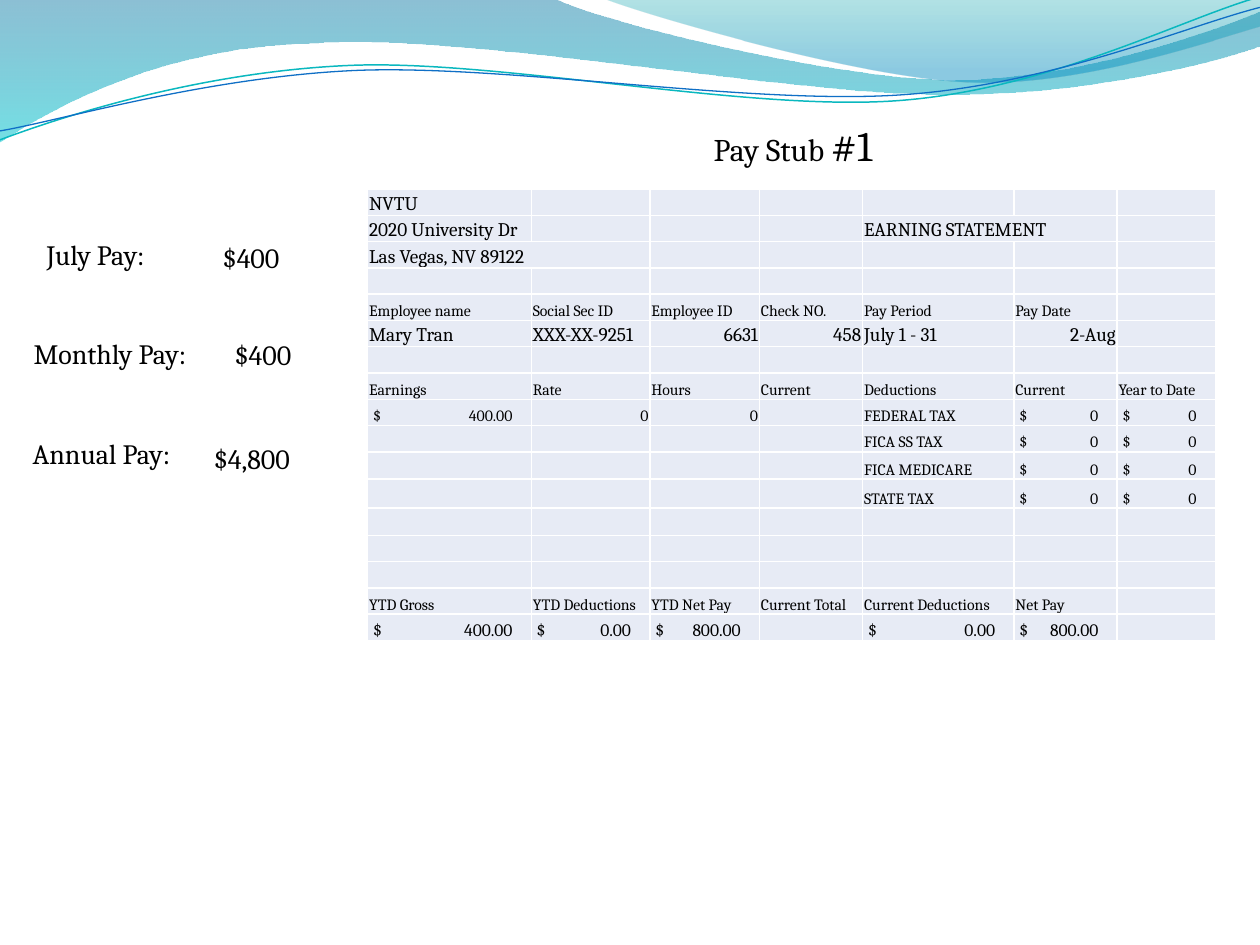
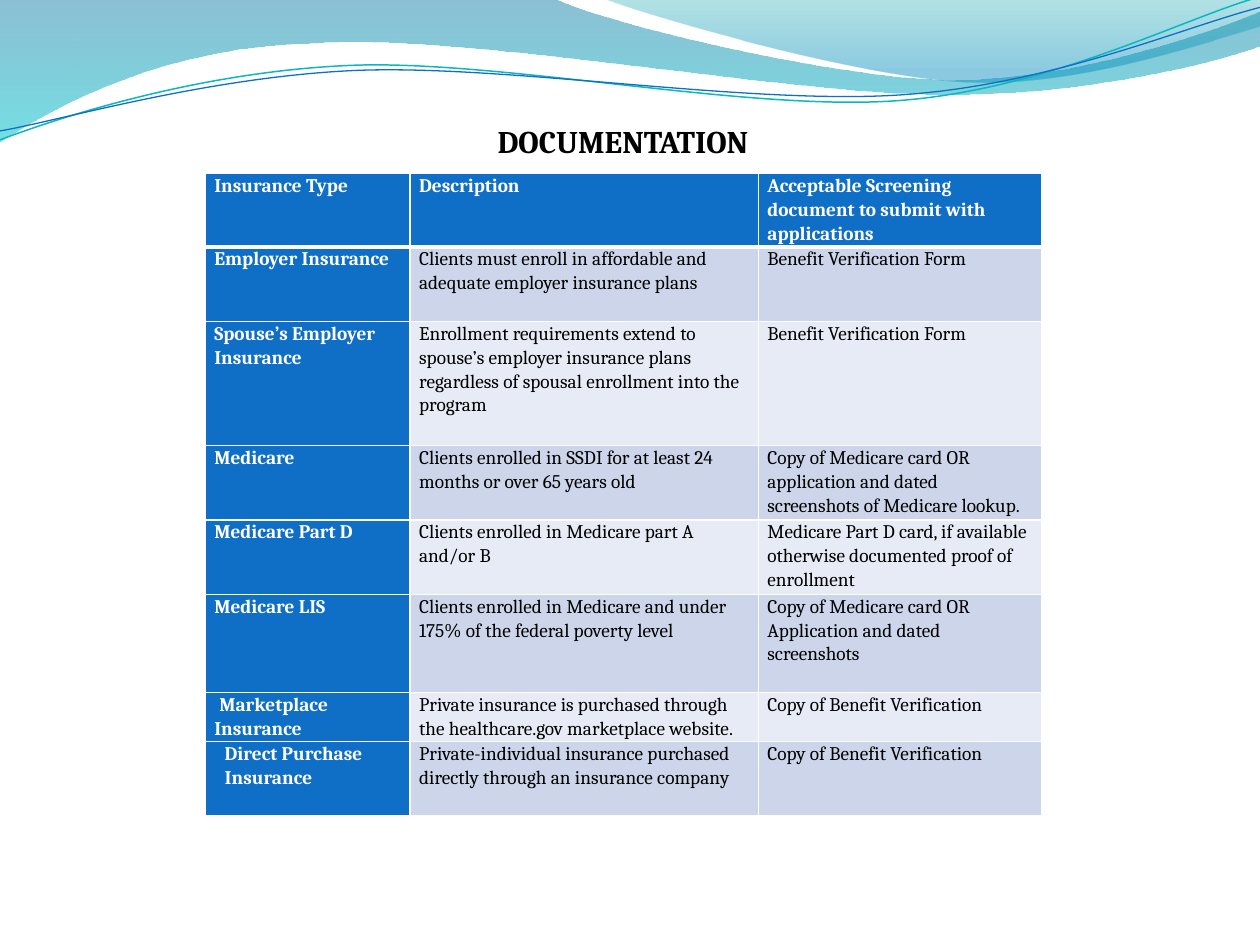
from dataclasses import dataclass

from lxml import etree
from pptx import Presentation
from pptx.dml.color import RGBColor
from pptx.enum.text import MSO_ANCHOR, MSO_AUTO_SIZE, PP_ALIGN
from pptx.oxml.ns import qn
from pptx.util import Cm, Pt

TOP, BOTTOM = MSO_ANCHOR.TOP, MSO_ANCHOR.BOTTOM
LEFT, CENTER, RIGHT = PP_ALIGN.LEFT, PP_ALIGN.CENTER, PP_ALIGN.RIGHT
NO_AUTOFIT = MSO_AUTO_SIZE.NONE

FONT = "Cambria"
BLACK, WHITE = "000000", "FFFFFF"
BLUE, PALE, MID = "0F6FC6", "E7EBF5", "CCD5EA"
TITLE_ONLY = 5


@dataclass(frozen=True)
class Stop:
    position: float
    color: str
    opacity: int


@dataclass(frozen=True)
class Wave:
    """Outline in cm: a pair is a straight step, six numbers are a curve."""
    start: tuple
    steps: list
    stops: tuple = ()
    line: str = ""
    width: float = 0


@dataclass(frozen=True)
class Label:
    text: str
    left: float
    top: float
    width: float


@dataclass(frozen=True)
class StubRow:
    size: float
    cells: tuple = ()
    height: float = 0.53


@dataclass(frozen=True)
class InsuranceRow:
    height: float
    cells: tuple
    margin: float = 0
    first_line: float = 0


# Header waves shared by the slides
WAVES = [
    Wave((0, 0), [(11.18, -0.03), (12.09, 0.43, 16.87, 1.6, 19.25, 1.6),
                  (21.67, 1.6, 24.33, 0.66, 25.4, 0.23), (25.43, 0.91),
                  (24.97, 1.12, 22.1, 1.93, 18.95, 1.9),
                  (15.8, 1.9, 9.7, 0.71, 6.53, 0.86),
                  (3.28, 0.91, 1.17, 2.11, -0.03, 2.87)],
         stops=(Stop(0, "0074A1", 45), Stop(1, "00C6CF", 55))),
    Wave((12.17, -0.03), [(12.93, 0.28, 17.32, 1.57, 19.53, 1.65),
                          (21.74, 1.75, 24.41, 0.81, 25.4, 0.53), (25.4, 0)],
         stops=(Stop(0, "00A1A9", 30), Stop(0.8, "008BBF", 45))),
    Wave((0, 2.82), [(1.22, 2.36, 4.01, 1.45, 7.04, 1.32),
                     (10.03, 1.19, 15.06, 2.26, 18.11, 2.03),
                     (21.16, 1.8, 23.83, 0.38, 25.35, -0.05)],
         line="0AB8BF", width=0.85),
    Wave((0, 2.64), [(1.19, 2.44, 4.17, 1.55, 7.19, 1.42),
                     (10.24, 1.3, 15.16, 2.13, 18.21, 1.91),
                     (21.23, 1.7, 23.9, 0.53, 25.4, 0.15)],
         line=BLUE, width=0.75),
]

# Pay stub content
PAY_LABELS = [
    Label("July Pay:", 0.69, 4.67, 2.72), Label("$400", 4.24, 4.72, 2.34),
    Label("Monthly Pay:", 0.43, 6.65, 4.01), Label("$400", 4.48, 6.68, 2.11),
    Label("Annual Pay:", 0.41, 8.68, 3.61), Label("$4,800", 4.06, 8.78, 2.54),
]
STUB_COLUMNS = [3.3, 2.39, 2.21, 2.08, 3.05, 2.08, 1.98]
AMOUNT_INSET, AMOUNT_GAP = 0.11, 0.38
RIGHT_ALIGNED = {"0", "6631", "458", "2-Aug"}
NO_TAX = ("$\t0", "$\t0")
STUB_ROWS = [
    StubRow(11, ("NVTU",)),
    StubRow(11, ("2020 University Dr", "", "", "", "EARNING STATEMENT")),
    StubRow(11, ("Las Vegas, NV 89122",)),
    StubRow(9),
    StubRow(9, ("Employee name", "Social Sec ID", "Employee ID", "Check NO.",
                "Pay Period", "Pay Date")),
    StubRow(11, ("Mary Tran", "XXX-XX-9251", "6631", "458", "July 1 - 31", "2-Aug")),
    StubRow(9),
    StubRow(9, ("Earnings", "Rate", "Hours", "Current", "Deductions", "Current",
                "Year to Date")),
    StubRow(9, ("$\t400.00", "0", "0", "", "FEDERAL TAX", *NO_TAX)),
    StubRow(9, ("", "", "", "", "FICA SS TAX", *NO_TAX)),
    StubRow(9, ("", "", "", "", "FICA MEDICARE", *NO_TAX), 0.55),
    StubRow(9, ("", "", "", "", "STATE TAX", *NO_TAX), 0.58),
    StubRow(9, height=0.55),
    StubRow(9),
    StubRow(9),
    StubRow(9, ("YTD Gross", "YTD Deductions", "YTD Net Pay", "Current Total",
                "Current Deductions", "Net Pay")),
    StubRow(10, ("$\t400.00", "$\t0.00", "$\t800.00", "", "$\t0.00", "$\t800.00")),
]
STUB_SPANS = [(1, 4), (2, 0)]

# Insurance content
INSURANCE_COLUMNS = [4.13, 7.02, 5.72]
INSURANCE_ROWS = [
    InsuranceRow(1.48, ("Insurance Type", "Description",
                        "Acceptable Screening document to submit with applications")),
    InsuranceRow(1.5, ("Employer Insurance",
                       "Clients must enroll in affordable and adequate employer "
                       "insurance plans", "Benefit Verification Form")),
    InsuranceRow(2.5, ("Spouse’s Employer\nInsurance",
                       "Enrollment requirements extend to spouse’s employer insurance "
                       "plans regardless of spousal enrollment into the program",
                       "Benefit Verification Form")),
    InsuranceRow(1.5, ("Medicare",
                       "Clients enrolled in SSDI for at least 24 months or over 65 "
                       "years old",
                       "Copy of Medicare card OR application and dated screenshots of "
                       "Medicare lookup.")),
    InsuranceRow(1.5, ("Medicare Part D", "Clients enrolled in Medicare part A and/or B",
                       "Medicare Part D card, if available otherwise documented proof "
                       "of enrollment")),
    InsuranceRow(1.98, ("Medicare LIS",
                        "Clients enrolled in Medicare and under 175% of the federal "
                        "poverty level",
                        "Copy of Medicare card OR Application and dated screenshots")),
    InsuranceRow(0.99, ("Marketplace Insurance",
                        "Private insurance is purchased through the healthcare.gov "
                        "marketplace website.", "Copy of Benefit Verification"),
                 first_line=0.1),
    InsuranceRow(1.5, ("Direct Purchase Insurance",
                       "Private-individual insurance purchased directly through an "
                       "insurance company", "Copy of Benefit Verification"),
                 margin=0.21),
]


def rgb(value: str) -> RGBColor:
    return RGBColor.from_string(value)


def format_runs(paragraph, size: float, color: str = BLACK, bold: bool = False) -> None:
    for run in paragraph.runs:
        run.font.name = FONT
        run.font.size = Pt(size)
        run.font.bold = bold
        run.font.color.rgb = rgb(color)


def fill_gradient(shape, stops: tuple) -> None:
    shape.fill.gradient()
    shape.fill.gradient_angle = 270
    for target, stop in zip(shape.fill.gradient_stops, stops):
        target.position = stop.position
        target.color.rgb = rgb(stop.color)
    colors = shape.element.spPr.iter(qn("a:srgbClr"))
    for color, stop in zip(list(colors), stops):
        etree.SubElement(color, qn("a:alpha"), val=str(stop.opacity * 1000))


def bend_curves(shape, steps: list) -> None:
    """Turn each three straight segments of a curved step into one Bézier segment."""
    segments = iter(list(shape.element.spPr.iter(qn("a:lnTo"))))
    for step in steps:
        first = next(segments)
        if len(step) == 6:
            first.tag = qn("a:cubicBezTo")
            for _ in range(2):
                extra = next(segments)
                first.append(extra[0])
                extra.getparent().remove(extra)


def draw_wave(slide, wave: Wave) -> None:
    x, y = wave.start
    builder = slide.shapes.build_freeform(Cm(x), Cm(y))
    points = [(Cm(step[i]), Cm(step[i + 1]))
              for step in wave.steps for i in range(0, len(step), 2)]
    builder.add_line_segments(points, close=bool(wave.stops))
    shape = builder.convert_to_shape()
    bend_curves(shape, wave.steps)
    shape.shadow.inherit = False
    if wave.stops:
        fill_gradient(shape, wave.stops)
        shape.line.fill.background()
    else:
        shape.fill.background()
        shape.line.color.rgb = rgb(wave.line)
        shape.line.width = Pt(wave.width)


def add_titled_slide(prs, left: float, top: float, width: float, height: float):
    """Add a slide with its waves and return it with the title paragraph."""
    slide = prs.slides.add_slide(prs.slide_layouts[TITLE_ONLY])
    for wave in WAVES:
        draw_wave(slide, wave)
    title = slide.shapes.title
    title.left, title.top = Cm(left), Cm(top)
    title.width, title.height = Cm(width), Cm(height)
    frame = title.text_frame
    frame.word_wrap = True
    frame.auto_size = NO_AUTOFIT
    frame.vertical_anchor = TOP
    frame.paragraphs[0].alignment = CENTER
    return slide, frame.paragraphs[0]


def add_label(slide, label: Label) -> None:
    box = slide.shapes.add_textbox(Cm(label.left), Cm(label.top), Cm(label.width), Cm(0.94))
    box.text_frame.word_wrap = True
    box.text_frame.text = label.text
    format_runs(box.text_frame.paragraphs[0], 16)


def add_grid(slide, left: float, top: float, columns: list, heights: list):
    frame = slide.shapes.add_table(len(heights), len(columns), Cm(left), Cm(top),
                                   Cm(sum(columns)), Cm(sum(heights)))
    table = frame.table
    table.horz_banding = False
    for column, width in zip(table.columns, columns):
        column.width = Cm(width)
    for row, height in zip(table.rows, heights):
        row.height = Cm(height)
    return table


def style_cell(cell, fill: str, side: float, top: float, anchor,
               top_line: float = 1, bottom_line: float = 1) -> None:
    cell.margin_left = cell.margin_right = Cm(side)
    cell.margin_top, cell.margin_bottom = Cm(top), 0
    cell.vertical_anchor = anchor
    properties = cell._tc.get_or_add_tcPr()
    for edge, width in (("L", 1), ("R", 1), ("T", top_line), ("B", bottom_line)):
        border = etree.SubElement(properties, qn(f"a:ln{edge}"), w=str(Pt(width)))
        solid = etree.SubElement(border, qn("a:solidFill"))
        etree.SubElement(solid, qn("a:srgbClr"), val=WHITE)
    cell.fill.solid()
    cell.fill.fore_color.rgb = rgb(fill)


def set_indent(paragraph, margin: float, first_line: float) -> None:
    properties = paragraph._p.get_or_add_pPr()
    properties.set("marL", str(Cm(margin)))
    properties.set("indent", str(Cm(first_line)))


def add_amount_tab(paragraph, position: float) -> None:
    tabs = etree.SubElement(paragraph._p.get_or_add_pPr(), qn("a:tabLst"))
    etree.SubElement(tabs, qn("a:tab"), pos=str(Cm(position)), algn="r")


def build_pay_stub(prs) -> None:
    slide, title = add_titled_slide(prs, 8.46, 2.29, 15.24, 1.27)
    title.text = "Pay Stub "
    title.add_run().text = "#1 "
    format_runs(title, 18)
    title.runs[1].font.size = Pt(24)
    for label in PAY_LABELS:
        add_label(slide, label)

    table = add_grid(slide, 7.41, 3.81, STUB_COLUMNS, [row.height for row in STUB_ROWS])
    table.first_row = False
    for r, row in enumerate(STUB_ROWS):
        for c, width in enumerate(STUB_COLUMNS):
            text = row.cells[c] if c < len(row.cells) else ""
            cell = table.cell(r, c)
            style_cell(cell, PALE, 0.03, 0.03, BOTTOM)
            paragraph = cell.text_frame.paragraphs[0]
            if not text:
                paragraph._p.get_or_add_endParaRPr().set("sz", "900")
                continue
            paragraph.text = text
            paragraph.alignment = RIGHT if text in RIGHT_ALIGNED else LEFT
            format_runs(paragraph, row.size)
            if text.startswith("$"):
                cell.margin_left = Cm(AMOUNT_INSET)
                add_amount_tab(paragraph, width - AMOUNT_GAP - AMOUNT_INSET)
    for r, c in STUB_SPANS:
        table.cell(r, c).merge(table.cell(r, c + 1))


def build_documentation(prs) -> None:
    slide, title = add_titled_slide(prs, 0.81, 2.34, 23.5, 1.02)
    title.text = "DOCUMENTATION"
    format_runs(title, 18, bold=True)

    table = add_grid(slide, 4.14, 3.5, INSURANCE_COLUMNS,
                     [row.height for row in INSURANCE_ROWS])
    for r, row in enumerate(INSURANCE_ROWS):
        for c, text in enumerate(row.cells):
            heading = r == 0 or c == 0
            fill = BLUE if heading else (MID if r % 2 else PALE)
            cell = table.cell(r, c)
            style_cell(cell, fill, 0.18, 0, TOP, top_line=3 if r == 1 else 1,
                       bottom_line=3 if r == 0 else 1)
            cell.text_frame.text = text
            for paragraph in cell.text_frame.paragraphs:
                paragraph.line_spacing = 1.07
                format_runs(paragraph, 11, WHITE if heading else BLACK, heading)
                if row.margin + row.first_line and c == 0:
                    set_indent(paragraph, row.margin, row.first_line)


def main() -> None:
    prs = Presentation()
    prs.slide_width, prs.slide_height = Cm(25.4), Cm(19.05)
    build_pay_stub(prs)
    build_documentation(prs)
    prs.save("out.pptx")


if __name__ == "__main__":
    main()
